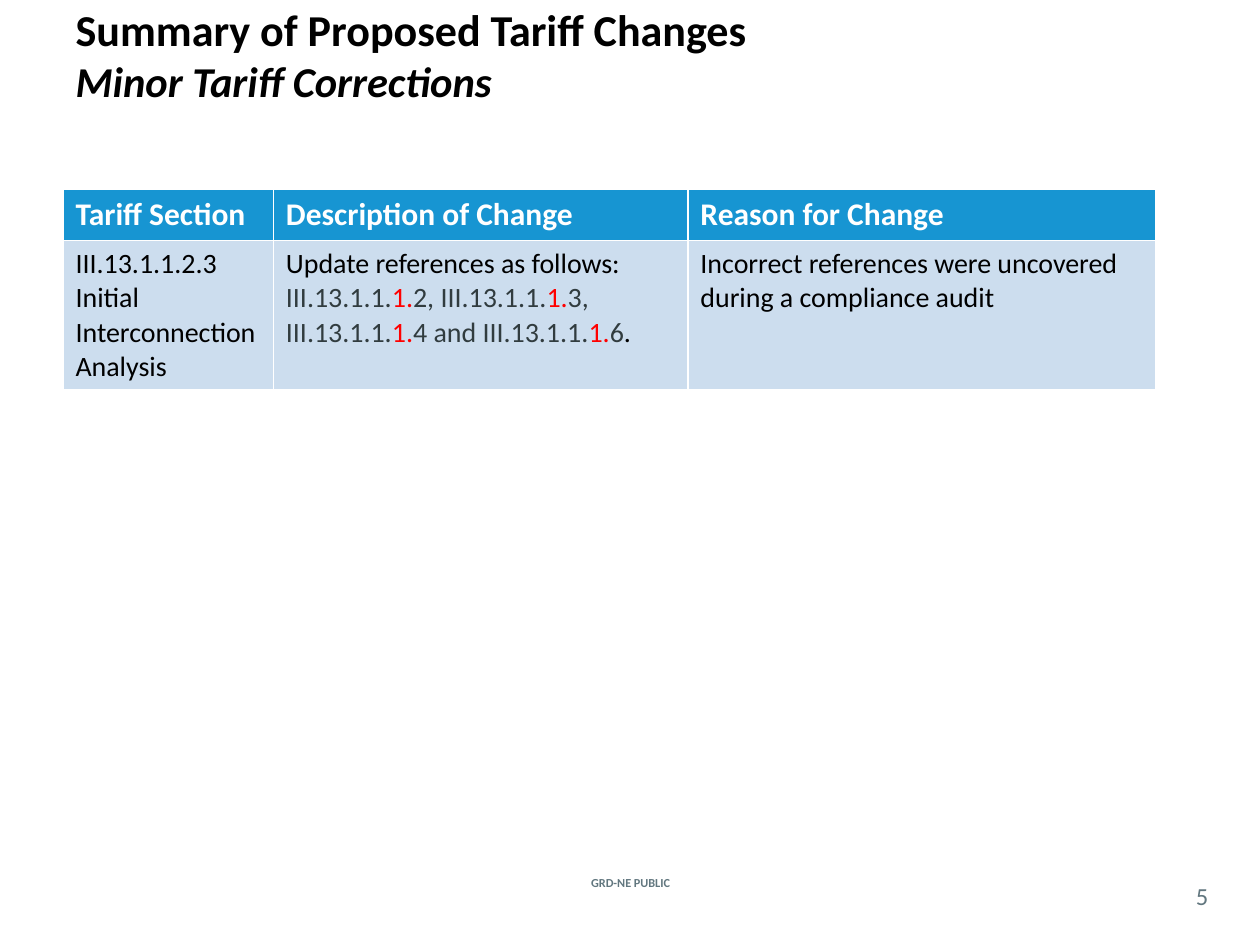
from pptx import Presentation
from pptx.dml.color import RGBColor
from pptx.enum.text import MSO_ANCHOR, PP_ALIGN
from pptx.util import Inches, Pt

BLACK = RGBColor(0x00, 0x00, 0x00)
WHITE = RGBColor(0xFF, 0xFF, 0xFF)
RED = RGBColor(0xFF, 0x00, 0x00)
SLATE = RGBColor(0x31, 0x3C, 0x3F)
GRAY = RGBColor(0x62, 0x77, 0x7F)
HEADER_BLUE = RGBColor(0x17, 0x95, 0xD2)
PALE_BLUE = RGBColor(0xCC, 0xDD, 0xEE)


def set_font(paragraph, size, color, bold=False):
    font = paragraph.font
    font.name = "Calibri"
    font.size = Pt(size)
    font.bold = bold
    font.color.rgb = color


def add_label(left, top, width, height, text, size, bold):
    label = slide.shapes.add_textbox(
        Inches(left), Inches(top), Inches(width), Inches(height))
    frame = label.text_frame
    frame.word_wrap = True
    frame.vertical_anchor = MSO_ANCHOR.MIDDLE
    frame.margin_left = frame.margin_right = 0
    frame.margin_top = frame.margin_bottom = 0
    paragraph = frame.paragraphs[0]
    paragraph.text = text
    paragraph.alignment = PP_ALIGN.CENTER
    set_font(paragraph, size, GRAY, bold)


prs = Presentation()
prs.slide_width, prs.slide_height = Inches(10), Inches(7.5)
slide = prs.slides.add_slide(prs.slide_layouts[5])

title = slide.shapes.title
title.left, title.top = Inches(0.5), Inches(0)
title.width, title.height = Inches(9), Inches(1.25)
title.text_frame.vertical_anchor = MSO_ANCHOR.TOP
title.text_frame.margin_top = Inches(0.02)
heading = title.text_frame.paragraphs[0]
heading.alignment = PP_ALIGN.LEFT
set_font(heading, 25.2, BLACK, True)
heading.add_run().text = "Summary of Proposed Tariff Changes"
heading.add_line_break()
subtitle = heading.add_run()
subtitle.text = "Minor Tariff Corrections"
subtitle.font.size = Pt(24.3)
subtitle.font.italic = True

changes = slide.shapes.add_table(
    2, 3, Inches(0.5), Inches(1.5), Inches(8.67), Inches(1.59)).table
for column, width in zip(changes.columns, (1.67, 3.29, 3.71)):
    column.width = Inches(width)
for row, height in zip(changes.rows, (0.41, 1.18)):
    row.height = Inches(height)

headers = ["Tariff Section", "Description of Change", "Reason for Change"]
for col, header in enumerate(headers):
    changes.cell(0, col).text = header

changes.cell(1, 0).text = "III.13.1.1.2.3\nInitial Interconnection Analysis"
changes.cell(1, 2).text = (
    "Incorrect references were uncovered during a compliance audit")

description = changes.cell(1, 1).text_frame.paragraphs[0]
description.add_run().text = "Update references as follows: "
references = ["III.13.1.1.", "2, III.13.1.1.", "3, III.13.1.1.",
              "4 and III.13.1.1.", "6"]
for index, reference in enumerate(references):
    if index:
        inserted = description.add_run()
        inserted.text = "1."
        inserted.font.color.rgb = RED
    kept = description.add_run()
    kept.text = reference
    kept.font.color.rgb = SLATE
description.add_run().text = "."

row_styles = [(HEADER_BLUE, 18, WHITE, True), (PALE_BLUE, 16, BLACK, False)]
for row, (fill, size, color, bold) in zip(changes.rows, row_styles):
    for cell in row.cells:
        cell.fill.solid()
        cell.fill.fore_color.rgb = fill
        for paragraph in cell.text_frame.paragraphs:
            set_font(paragraph, size, color, bold)

add_label(4.27, 6.92, 1.47, 0.17, "GRD-NE PUBLIC", 7, True)
add_label(9.33, 6.96, 0.42, 0.29, "5", 14, False)

prs.save("out.pptx")
